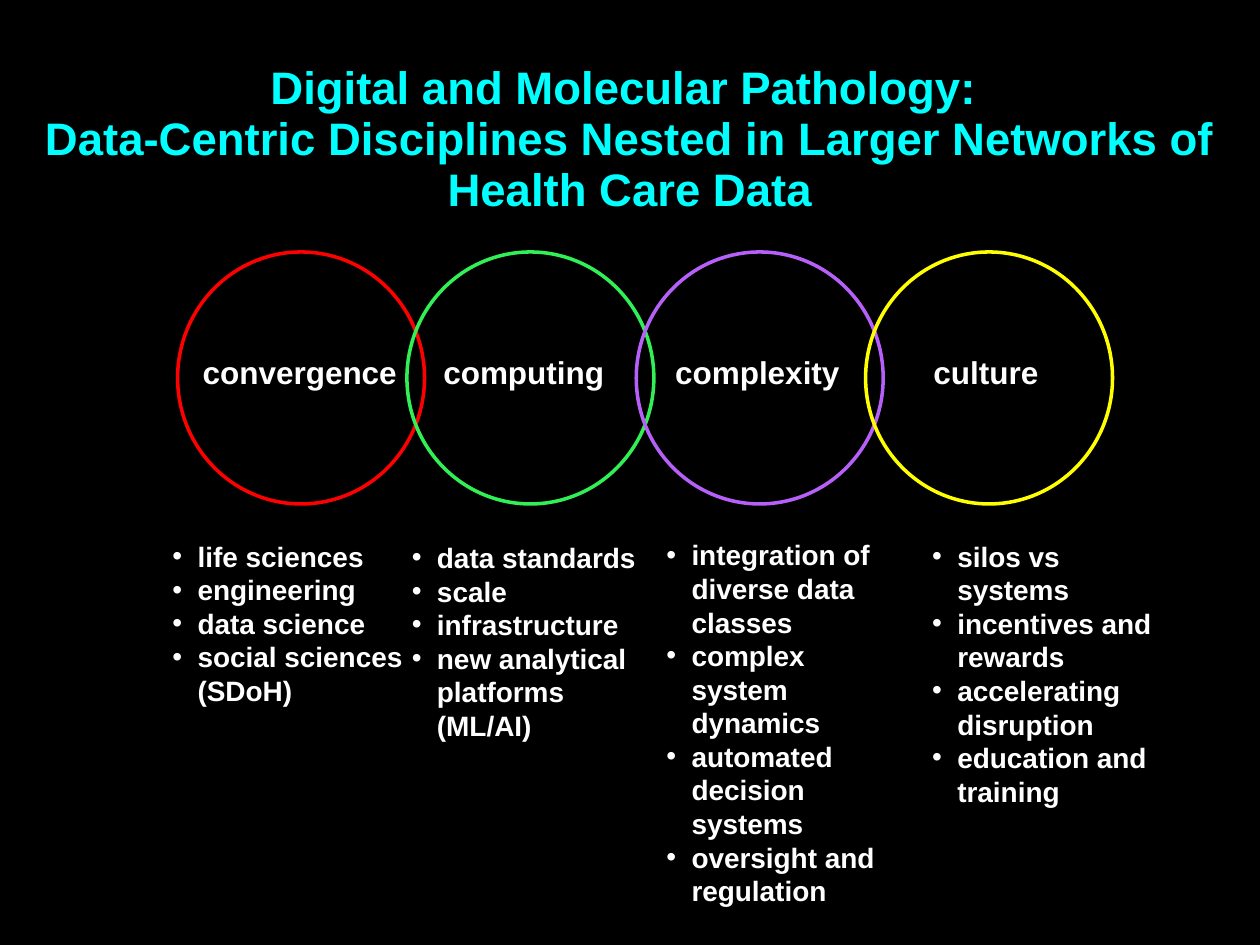
from lxml import etree
from pptx import Presentation
from pptx.dml.color import RGBColor
from pptx.enum.shapes import MSO_SHAPE
from pptx.enum.text import MSO_AUTO_SIZE, PP_ALIGN
from pptx.oxml.ns import qn
from pptx.util import Inches, Pt

OVAL = MSO_SHAPE.OVAL
CENTER = PP_ALIGN.CENTER
GROW = MSO_AUTO_SIZE.SHAPE_TO_FIT_TEXT
FONT = "Arial"
COLORS = {
    "background": "000000", "title": "00FFFF", "text": "FFFFFF",
    "convergence": "FF0000", "computing": "30F055",
    "complexity": "B760F9", "culture": "FFFF00",
}
TITLE = ("Digital and Molecular Pathology: \v"
         "Data-Centric Disciplines Nested in Larger Networks of Health Care Data")
CIRCLE_LEFT, CIRCLE_TOP, CIRCLE_STEP = 1.41, 2, 1.82
CIRCLE_WIDTH, CIRCLE_HEIGHT = 1.96, 2
LABEL_TOP, LABEL_HEIGHT = 2.75, 0.4

# Theme name, label (left, width), topic box, topics
THEMES = [
    ("convergence", (1.51, 1.76), (1.27, 4.23, 2.07, 1.45),
     ["life sciences", "engineering", "data science", "social sciences (SDoH)"]),
    ("computing", (3.42, 1.57), (3.17, 4.24, 2.07, 1.72),
     ["data standards", "scale", "infrastructure",
      "new analytical platforms (ML/AI)"]),
    ("complexity", (5.26, 1.54), (5.19, 4.22, 1.96, 3.06),
     ["integration of diverse data classes", "complex system dynamics",
      "automated decision systems", "oversight and regulation"]),
    ("culture", (7.31, 1.09), (7.3, 4.23, 1.96, 2.26),
     ["silos vs systems", "incentives and rewards", "accelerating disruption",
      "education and training"]),
]


def rgb(name):
    return RGBColor.from_string(COLORS[name])


def add_text_frame(slide, box, wrap=True):
    frame = slide.shapes.add_textbox(*map(Inches, box)).text_frame
    frame.word_wrap = wrap
    return frame


def style_runs(paragraph, size, color):
    for run in paragraph.runs:
        run.font.name = FONT
        run.font.size = Pt(size)
        run.font.bold = True
        run.font.color.rgb = rgb(color)


def add_bullet(paragraph):
    properties = paragraph._p.get_or_add_pPr()
    properties.set("marL", str(Inches(0.2)))
    properties.set("indent", str(Inches(-0.2)))
    etree.SubElement(properties, qn("a:buFont"), typeface=FONT)
    etree.SubElement(properties, qn("a:buChar"), char="•")


def add_title(slide, box):
    frame = add_text_frame(slide, box)
    frame.margin_left = frame.margin_right = 0
    frame.margin_top = frame.margin_bottom = 0
    heading = frame.paragraphs[0]
    heading.text = TITLE
    heading.alignment = CENTER
    heading.line_spacing = 0.94
    style_runs(heading, 26, "title")


def add_topics(slide, box, topics):
    frame = add_text_frame(slide, box)
    frame.auto_size = GROW
    for index, topic in enumerate(topics):
        paragraph = frame.add_paragraph() if index else frame.paragraphs[0]
        paragraph.text = topic
        add_bullet(paragraph)
        style_runs(paragraph, 16, "text")


def add_circle(slide, box, theme):
    circle = slide.shapes.add_shape(OVAL, *map(Inches, box))
    circle.shadow.inherit = False
    circle.fill.background()
    circle.line.color.rgb = rgb(theme)
    circle.line.width = Pt(2)


def add_label(slide, box, theme):
    frame = add_text_frame(slide, box, wrap=False)
    frame.auto_size = GROW
    frame.paragraphs[0].text = theme
    style_runs(frame.paragraphs[0], 18, "text")


def main():
    presentation = Presentation()
    presentation.slide_width = Inches(10)
    presentation.slide_height = Inches(7.5)
    slide = presentation.slides.add_slide(presentation.slide_layouts[6])
    slide.background.fill.solid()
    slide.background.fill.fore_color.rgb = rgb("background")

    add_title(slide, (0, 0.5, 10, 0.81))
    # Topic lists, then the chain of circles, then the labels on top
    for _, _, topic_box, topics in THEMES:
        add_topics(slide, topic_box, topics)
    for index, (theme, *_) in enumerate(THEMES):
        left = CIRCLE_LEFT + index * CIRCLE_STEP
        add_circle(slide, (left, CIRCLE_TOP, CIRCLE_WIDTH, CIRCLE_HEIGHT), theme)
    for theme, (left, width), *_ in THEMES:
        add_label(slide, (left, LABEL_TOP, width, LABEL_HEIGHT), theme)

    presentation.save("out.pptx")


if __name__ == "__main__":
    main()
